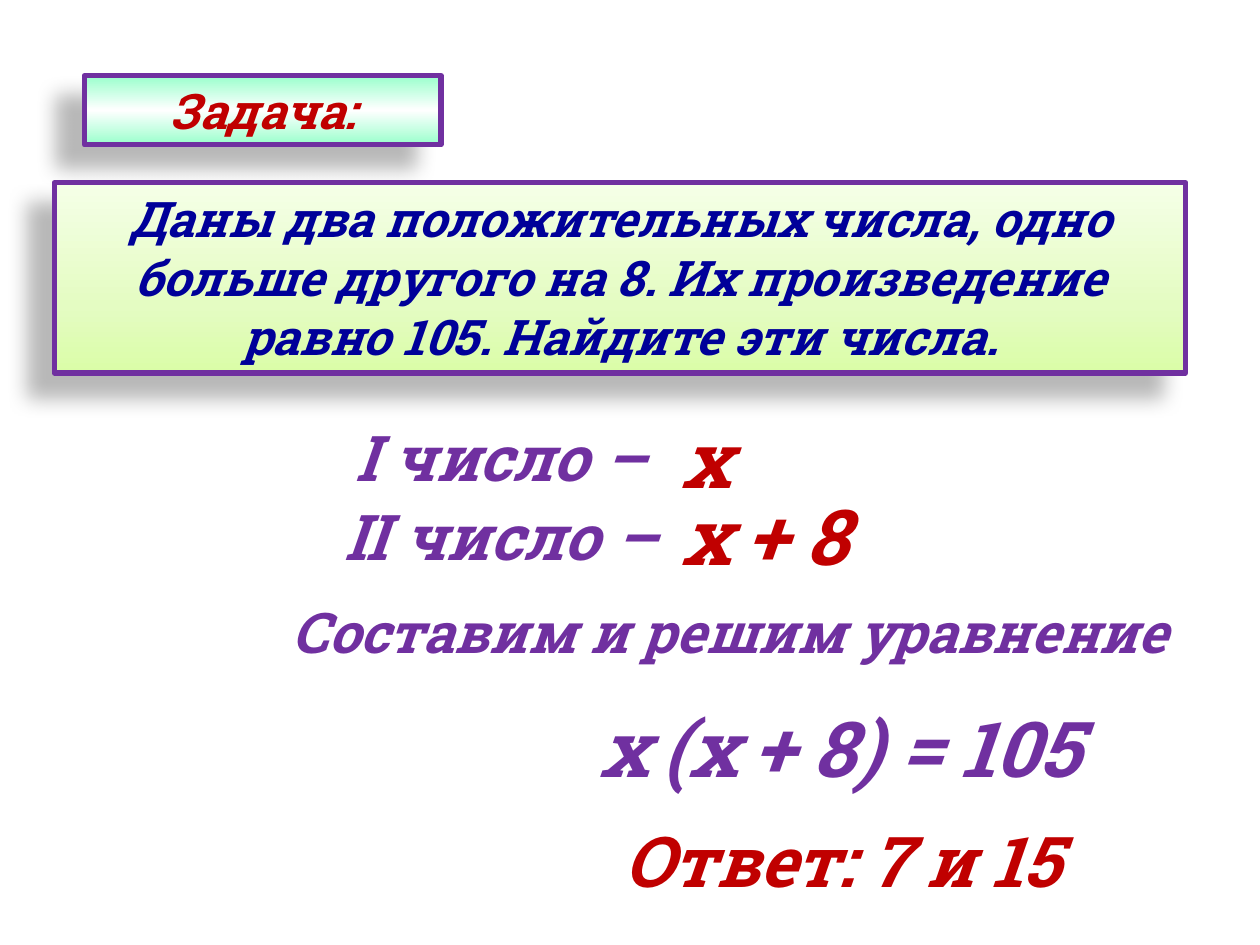
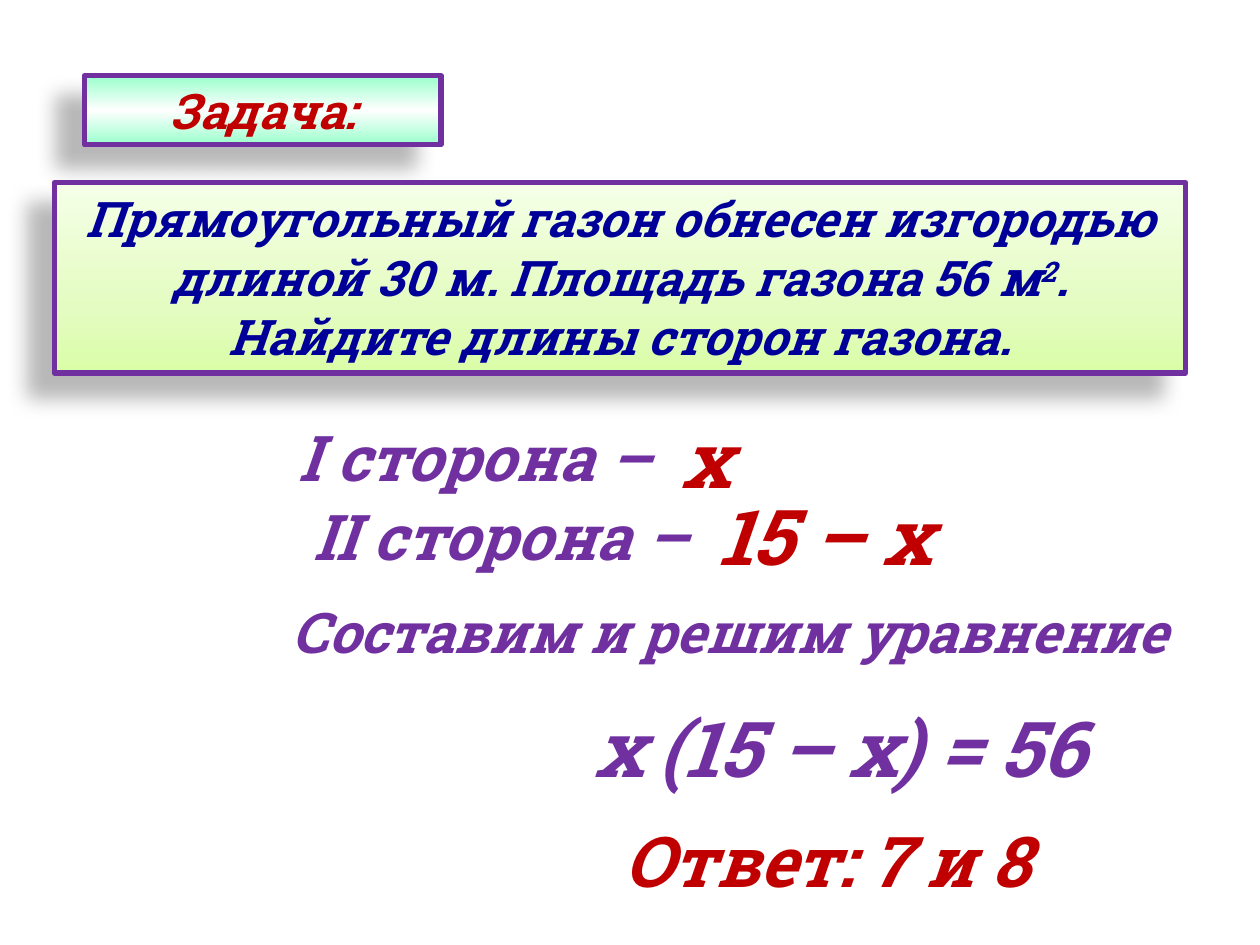
"""Build two slides with word problems solved by quadratic equations."""
from lxml import etree
from pptx import Presentation
from pptx import util as u
from pptx.dml.color import RGBColor
from pptx.enum import shapes, text

FONT = "Roboto Slab"
PURPLE, RED, NAVY = "7030A0", "C00000", "000099"
MINT = [(0, "99FFCC"), (50, "FFFFFF"), (100, "99FFCC")]
LIME = [(0, "DAFDA7"), (35, "E4FCC2"), (100, "F5FFE7")]
NAMESPACE = "http://schemas.openxmlformats.org/drawingml/2006/main"
CENTER, LEFT = text.PP_ALIGN.CENTER, text.PP_ALIGN.LEFT

HEADING = "Задача:"
STEP = "Составим и решим уравнение"
HEADING_BOX = (0.67, 0.6, 2.83, 0.55)
CONDITION_BOX = (0.43, 1.45, 8.98, 1.51)
STEP_BOX = (1.93, 4.69, 7.73, 0.64)

STYLES = {
    "name": (36, PURPLE, CENTER),
    "value": (44, RED, LEFT),
    "step": (32, PURPLE, CENTER),
    "equation": (44, PURPLE, CENTER),
    "answer": (40, RED, LEFT),
}

PROBLEMS = [
    {
        "condition": [("Даны два положительных числа, одно больше другого на 8. "
                       "Их произведение равно 105. Найдите эти числа.", False)],
        "solution": [
            ("name", "Ι число –", (2.7, 3.27, 2.55, 0.71)),
            ("name", "ΙΙ число –", (2.61, 3.9, 2.72, 0.71)),
            ("value", "х", (5.31, 3.22, 0.58, 0.84)),
            ("value", "х + 8", (5.31, 3.83, 1.79, 0.84)),
            ("equation", "х (х + 8) = 105", (4.29, 5.51, 4.75, 0.84)),
            ("answer", "Ответ: 7 и 15", (4.85, 6.44, 4.64, 0.77)),
        ],
    },
    {
        "condition": [("Прямоугольный газон обнесен изгородью длиной 30 м. "
                       "Площадь газона 56 м", False),
                      ("2", True),
                      (". Найдите длины сторон газона.", False)],
        "solution": [
            ("name", "Ι сторона –", (2.09, 3.27, 3.36, 0.71)),
            ("name", "ΙΙ сторона –", (2.21, 3.9, 3.53, 0.71)),
            ("value", "х", (5.31, 3.22, 0.58, 0.84)),
            ("value", "15 – х", (5.6, 3.83, 2.15, 0.84)),
            ("equation", "х (15 – х) = 56", (4.32, 5.51, 4.69, 0.84)),
            ("answer", "Ответ: 7 и 8", (4.85, 6.44, 4.26, 0.77)),
        ],
    },
]


def color(value):
    return RGBColor.from_string(value)


def inches(box):
    return [u.Inches(length) for length in box]


def append_xml(parent, xml):
    parent.append(etree.fromstring(xml.replace(" ", f' xmlns:a="{NAMESPACE}" ', 1)))


def write(shape, runs, size, hue, alignment, wrap=False):
    frame = shape.text_frame
    frame.word_wrap = wrap
    paragraph = frame.paragraphs[0]
    paragraph.alignment = alignment
    for words, raised in runs:
        run = paragraph.add_run()
        run.text = words
        font = run.font
        font.name, font.size = FONT, u.Pt(size)
        font.bold = font.italic = True
        font.color.rgb = color(hue)
        if raised:
            run._r.get_or_add_rPr().set("baseline", "30000")


def decorate(shape, stops, angle):
    """Give a shape its gradient, purple outline and soft shadow."""
    properties = shape._element.spPr
    marks = "".join(f'<a:gs pos="{position * 1000}"><a:srgbClr val="{hue}"/></a:gs>'
                    for position, hue in stops)
    append_xml(properties, f'<a:gradFill rotWithShape="1"><a:gsLst>{marks}</a:gsLst>'
                           f'<a:lin ang="{angle * 60000}" scaled="0"/></a:gradFill>')
    shape.line.color.rgb = color(PURPLE)
    shape.line.width = u.Pt(3)
    append_xml(properties, f'<a:effectLst ><a:outerShdw blurRad="{u.Pt(11.8)}" '
                           f'dist="{u.Pt(19.7)}" dir="{141 * 60000}" algn="ctr" rotWithShape="0">'
                           '<a:srgbClr val="000000"><a:alpha val="28000"/></a:srgbClr>'
                           '</a:outerShdw></a:effectLst>')


def add_heading(slide):
    title = slide.shapes.title
    title.left, title.top, title.width, title.height = inches(HEADING_BOX)
    append_xml(title._element.spPr, '<a:prstGeom prst="roundRect"><a:avLst>'
                                    '<a:gd name="adj" fmla="val 50000"/></a:avLst></a:prstGeom>')
    decorate(title, MINT, 90)
    title.text_frame.auto_size = text.MSO_AUTO_SIZE.NONE
    title.text_frame.vertical_anchor = text.MSO_ANCHOR.MIDDLE
    write(title, [(HEADING, False)], 28, RED, CENTER)


def add_condition(slide, runs):
    panel = slide.shapes.add_shape(shapes.MSO_SHAPE.RECTANGLE, *inches(CONDITION_BOX))
    decorate(panel, LIME, 270)
    panel.text_frame.vertical_anchor = text.MSO_ANCHOR.TOP
    panel.text_frame.auto_size = text.MSO_AUTO_SIZE.SHAPE_TO_FIT_TEXT
    write(panel, runs, 28, NAVY, CENTER, wrap=True)


def add_line(slide, style, words, box):
    label = slide.shapes.add_textbox(*inches(box))
    label.text_frame.auto_size = text.MSO_AUTO_SIZE.SHAPE_TO_FIT_TEXT
    write(label, [(words, False)], *STYLES[style])


def main():
    presentation = Presentation()
    presentation.slide_width, presentation.slide_height = inches((10, 7.5))
    for problem in PROBLEMS:
        slide = presentation.slides.add_slide(presentation.slide_layouts[5])
        add_heading(slide)
        add_condition(slide, problem["condition"])
        for style, words, box in [("step", STEP, STEP_BOX), *problem["solution"]]:
            add_line(slide, style, words, box)
    presentation.save("out.pptx")


if __name__ == "__main__":
    main()
